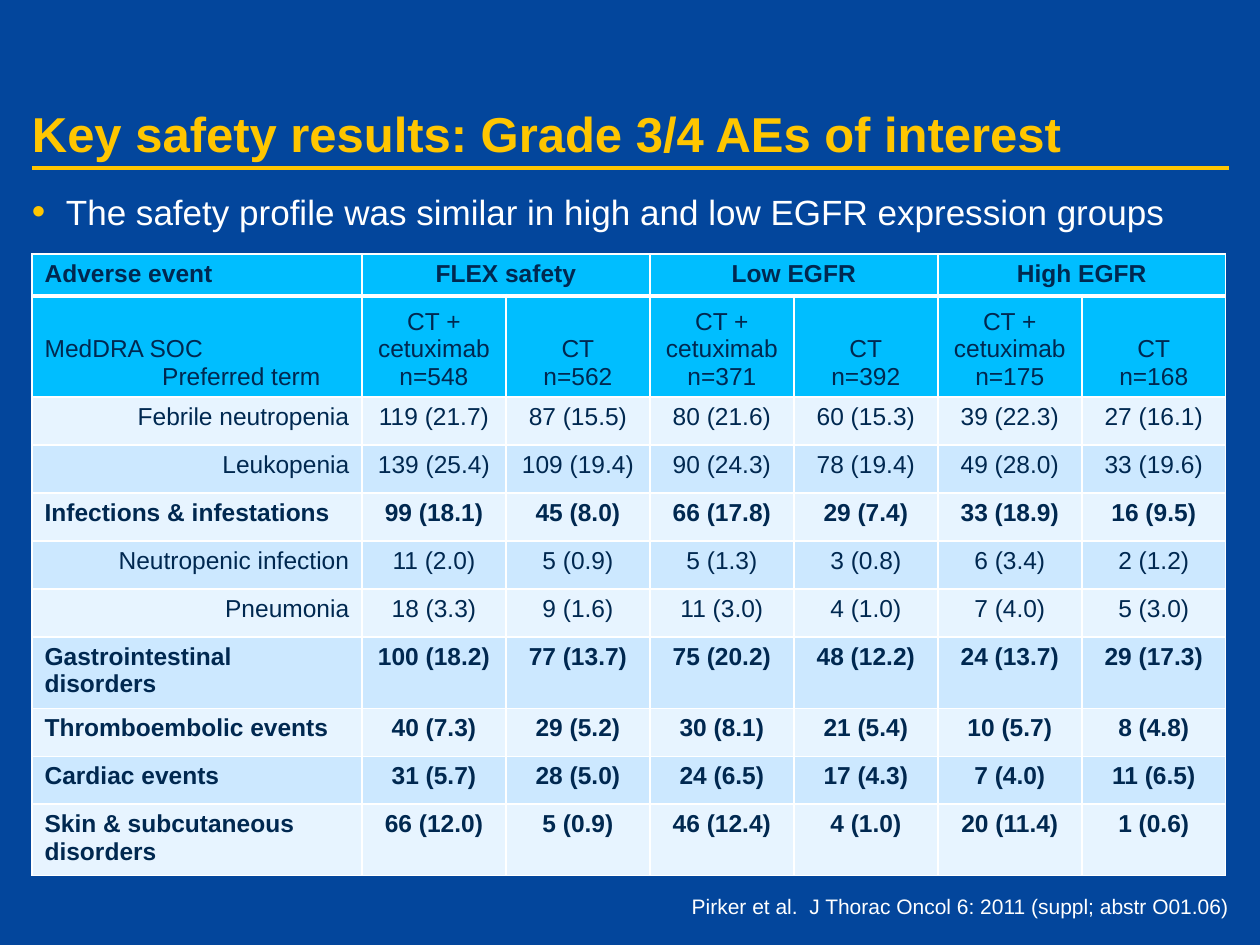
from copy import deepcopy
from dataclasses import dataclass

from lxml.etree import SubElement
from pptx import Presentation
from pptx.dml.color import RGBColor as RGB
from pptx.enum.shapes import MSO_CONNECTOR as Connector
from pptx.enum.text import MSO_ANCHOR as Anchor, PP_ALIGN as Align
from pptx.oxml.ns import qn
from pptx.util import Pt

EMU_PER_PX = 914400 / 126


def px(length):
    return round(length * EMU_PER_PX)


@dataclass(frozen=True)
class Theme:
    font: str = "Arial"
    background: str = "03469C"
    accent: str = "FFC600"
    light: str = "FFFFFF"
    ink: str = "002850"
    header: str = "00BEFF"
    bands: tuple = ("E7F4FF", "CCE8FF")
    title_size: int = 28
    body_size: int = 20
    table_size: int = 14
    source_size: int = 12


def add_xml(parent, tag, **attributes):
    return SubElement(parent, qn(tag), {k: str(v) for k, v in attributes.items()})


def add_colour(parent, colour):
    add_xml(add_xml(parent, "a:solidFill"), "a:srgbClr", val=colour)


class SlideBuilder:
    def __init__(self, slide, theme):
        self.slide = slide
        self.theme = theme
        slide.background.fill.solid()
        slide.background.fill.fore_color.rgb = RGB.from_string(theme.background)

    def style(self, frame, size, colour, bold=False, align=Align.LEFT):
        for paragraph in frame.paragraphs:
            paragraph.alignment = align
            for run in paragraph.runs:
                run.font.name = self.theme.font
                run.font.size = Pt(size)
                run.font.bold = bold
                run.font.color.rgb = RGB.from_string(colour)
            # Line breaks need the run's size to keep the line height.
            for line_break in paragraph._p.findall(qn("a:br")):
                line_break.append(deepcopy(paragraph.runs[0]._r.rPr))

    def text(self, content, box, size, colour, bold=False, align=Align.LEFT,
             anchor=Anchor.TOP, inset_top=0):
        frame = self.slide.shapes.add_textbox(*map(px, box)).text_frame
        frame.word_wrap = True
        frame.vertical_anchor = anchor
        frame.margin_left = frame.margin_right = frame.margin_bottom = 0
        frame.margin_top = px(inset_top)
        frame.text = content
        self.style(frame, size, colour, bold, align)
        return frame

    def bullet(self, content, box):
        frame = self.text(content, box, self.theme.body_size, self.theme.light, inset_top=6)
        properties = frame.paragraphs[0]._p.get_or_add_pPr()
        properties.set("marL", str(px(34)))
        properties.set("indent", str(px(-34)))
        add_xml(add_xml(properties, "a:buClr"), "a:srgbClr", val=self.theme.accent)
        add_xml(properties, "a:buSzPct", val=110000)
        add_xml(properties, "a:buFont", typeface=self.theme.font)
        add_xml(properties, "a:buChar", char="•")

    def rule(self, left, right, y, width):
        line = self.slide.shapes.add_connector(
            Connector.STRAIGHT, px(left), px(y), px(right), px(y))
        line.line.color.rgb = RGB.from_string(self.theme.accent)
        line.line.width = Pt(width)
        add_xml(line._element.spPr, "a:effectLst")

    def table(self, left, top, columns, rows):
        table = self.slide.shapes.add_table(
            len(rows), len(columns), px(left), px(top),
            px(sum(columns)), px(sum(rows))).table
        table.first_row = table.horz_banding = False
        for column, width in zip(table.columns, columns):
            column.width = px(width)
        for row, height in zip(table.rows, rows):
            row.height = px(height)
        return table

    def borders(self, cell, top=1, bottom=1):
        properties = cell._tc.get_or_add_tcPr()
        for side, width in (("L", 1), ("R", 1), ("T", top), ("B", bottom)):
            add_colour(add_xml(properties, f"a:ln{side}", w=Pt(width)), self.theme.light)

    def cell(self, cell, content, fill, bold=False, align=Align.CENTER,
             anchor=Anchor.TOP, top=1, bottom=1):
        self.borders(cell, top, bottom)
        cell.fill.solid()
        cell.fill.fore_color.rgb = RGB.from_string(fill)
        cell.vertical_anchor = anchor
        cell.text_frame.text = content
        self.style(cell.text_frame, self.theme.table_size, self.theme.ink, bold, align)


GROUPS = [("FLEX safety", 548, 562), ("Low EGFR", 371, 392), ("High EGFR", 175, 168)]

# Label, whether it is a system organ class, then the values of each group's two arms
EVENTS = [
    ("Febrile neutropenia", False,
     ["119 (21.7)", "87 (15.5)", "80 (21.6)", "60 (15.3)", "39 (22.3)", "27 (16.1)"]),
    ("Leukopenia", False,
     ["139 (25.4)", "109 (19.4)", "90 (24.3)", "78 (19.4)", "49 (28.0)", "33 (19.6)"]),
    ("Infections & infestations", True,
     ["99 (18.1)", "45 (8.0)", "66 (17.8)", "29 (7.4)", "33 (18.9)", "16 (9.5)"]),
    ("Neutropenic infection", False,
     ["11 (2.0)", "5 (0.9)", "5 (1.3)", "3 (0.8)", "6 (3.4)", "2 (1.2)"]),
    ("Pneumonia", False,
     ["18 (3.3)", "9 (1.6)", "11 (3.0)", "4 (1.0)", "7 (4.0)", "5 (3.0)"]),
    ("Gastrointestinal disorders", True,
     ["100 (18.2)", "77 (13.7)", "75 (20.2)", "48 (12.2)", "24 (13.7)", "29 (17.3)"]),
    ("Thromboembolic events", True,
     ["40 (7.3)", "29 (5.2)", "30 (8.1)", "21 (5.4)", "10 (5.7)", "8 (4.8)"]),
    ("Cardiac events", True,
     ["31 (5.7)", "28 (5.0)", "24 (6.5)", "17 (4.3)", "7 (4.0)", "11 (6.5)"]),
    ("Skin & subcutaneous disorders", True,
     ["66 (12.0)", "5 (0.9)", "46 (12.4)", "4 (1.0)", "20 (11.4)", "1 (0.6)"]),
]


def add_safety_table(builder):
    theme = builder.theme
    event_heights = [68 if "disorders" in label else 48 for label, _, _ in EVENTS]
    table = builder.table(32, 254, [330] + [144] * 6, [40, 97] + event_heights)

    group_row = dict(fill=theme.header, bold=True, bottom=3)
    arm_row = dict(fill=theme.header, anchor=Anchor.BOTTOM, top=3)
    builder.cell(table.cell(0, 0), "Adverse event", align=Align.LEFT, **group_row)
    terms = table.cell(1, 0)
    builder.cell(terms, "MedDRA SOC\v\tPreferred term", align=Align.LEFT, **arm_row)
    tabs = add_xml(terms.text_frame.paragraphs[0]._p.get_or_add_pPr(), "a:tabLst")
    add_xml(tabs, "a:tab", pos=px(276), algn="r")

    for index, (group, combined_n, chemo_n) in enumerate(GROUPS):
        first = 1 + 2 * index
        heading = table.cell(0, first)
        heading.merge(table.cell(0, first + 1))
        builder.cell(heading, group, **group_row)
        builder.borders(table.cell(0, first + 1), bottom=3)
        builder.cell(table.cell(1, first), f"CT + cetuximab\nn={combined_n}", **arm_row)
        builder.cell(table.cell(1, first + 1), f"CT\vn={chemo_n}", **arm_row)

    for index, (label, is_class, values) in enumerate(EVENTS):
        band = theme.bands[index % 2]
        label_align = Align.LEFT if is_class else Align.RIGHT
        builder.cell(table.cell(index + 2, 0), label, band, is_class, label_align)
        for column, value in enumerate(values, start=1):
            builder.cell(table.cell(index + 2, column), value, band, is_class)


def main():
    deck = Presentation()
    deck.slide_width, deck.slide_height = px(1260), px(945)
    theme = Theme()
    builder = SlideBuilder(deck.slides.add_slide(deck.slide_layouts[6]), theme)

    builder.rule(32, 1229, 168, 2.25)
    builder.text("Key safety results: Grade 3/4 AEs of interest", (32, 32, 1197, 130),
                 theme.title_size, theme.accent, bold=True, anchor=Anchor.BOTTOM, inset_top=6)
    builder.bullet("The safety profile was similar in high and low EGFR expression groups",
                   (32, 184, 1197, 54))
    add_safety_table(builder)
    builder.text("Pirker et al.  J Thorac Oncol 6: 2011 (suppl; abstr O01.06)",
                 (630, 894, 599, 25), theme.source_size, theme.light, align=Align.RIGHT)

    deck.save("out.pptx")


if __name__ == "__main__":
    main()
